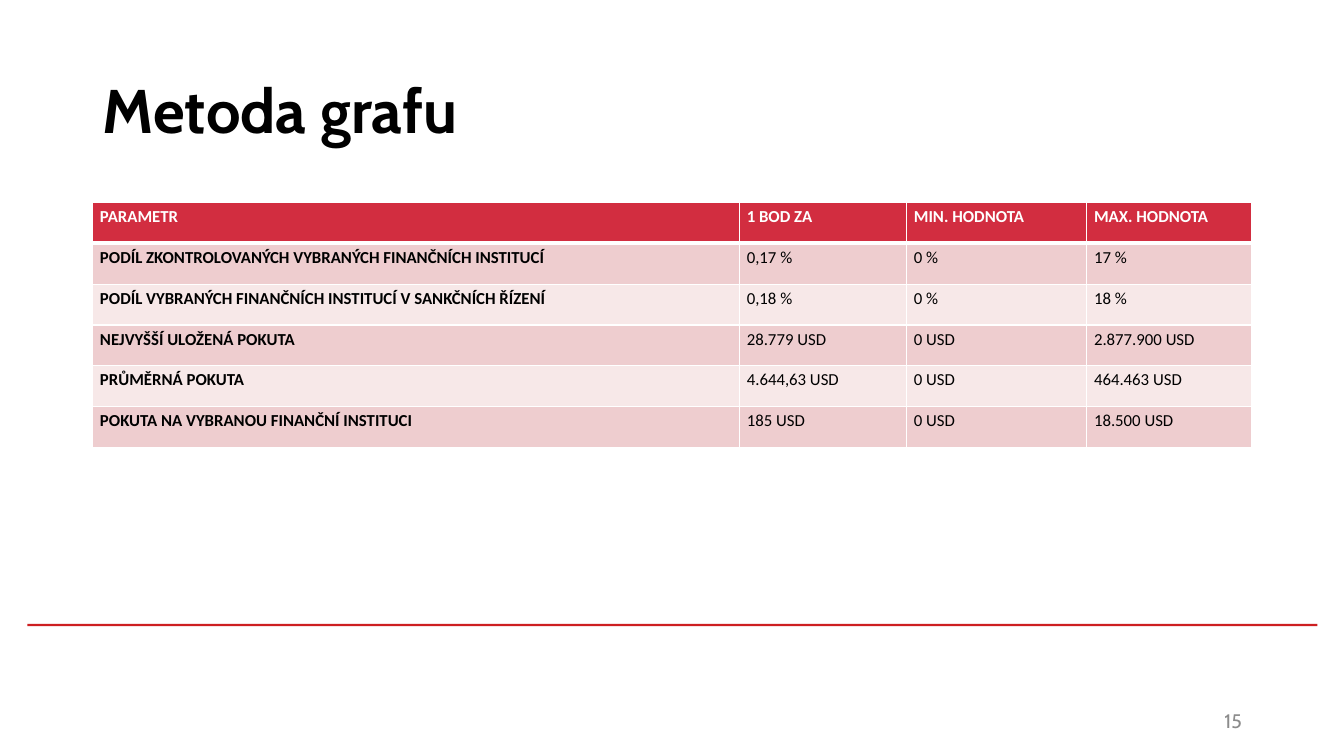
from lxml.etree import SubElement
from pptx import Presentation
from pptx.dml.color import RGBColor
from pptx.enum.shapes import MSO_SHAPE
from pptx.enum.text import MSO_ANCHOR, PP_ALIGN
from pptx.oxml.ns import qn
from pptx.util import Cm, Pt

BLACK = RGBColor(0x00, 0x00, 0x00)
WHITE = RGBColor(0xFF, 0xFF, 0xFF)
GRAY = RGBColor(0x8C, 0x8C, 0x8C)
RULE_RED = RGBColor(0xCD, 0x1F, 0x21)
HEADER_RED = RGBColor(0xD2, 0x2D, 0x40)
DARK_BAND = RGBColor(0xEE, 0xCD, 0xCF)
LIGHT_BAND = RGBColor(0xF7, 0xE8, 0xE8)

ROWS = [
    ("PARAMETR", "1 BOD ZA", "MIN. HODNOTA", "MAX. HODNOTA"),
    ("PODÍL ZKONTROLOVANÝCH VYBRANÝCH FINANČNÍCH INSTITUCÍ", "0,17 %", "0 %", "17 %"),
    ("PODÍL VYBRANÝCH FINANČNÍCH INSTITUCÍ V SANKČNÍCH ŘÍZENÍ", "0,18 %", "0 %", "18 %"),
    ("NEJVYŠŠÍ ULOŽENÁ POKUTA", "28.779 USD", "0 USD", "2.877.900 USD"),
    ("PRŮMĚRNÁ POKUTA", "4.644,63 USD", "0 USD", "464.463 USD"),
    ("POKUTA NA VYBRANOU FINANČNÍ INSTITUCI", "185 USD", "0 USD", "18.500 USD"),
]
COLUMN_WIDTHS = [16.3, 4.21, 4.54, 4.16]
ROW_HEIGHT = 1.03


def write_text(text_frame, text, *, size, font="Cabin", color=BLACK, bold=False,
               align=PP_ALIGN.LEFT, line_spacing=None, space_after=0):
    text_frame.word_wrap = True
    paragraph = text_frame.paragraphs[0]
    paragraph.alignment = align
    paragraph.line_spacing = line_spacing
    paragraph.space_after = Pt(space_after)
    run = paragraph.add_run()
    run.text = text
    run.font.name = font
    run.font.size = Pt(size)
    run.font.bold = bold
    run.font.color.rgb = color


def set_border(cell, side, width):
    properties = cell._tc.get_or_add_tcPr()
    line = SubElement(properties, qn(f"a:{side}"), w=str(Pt(width)))
    fill = SubElement(line, qn("a:solidFill"))
    SubElement(fill, qn("a:srgbClr"), val=str(WHITE))


presentation = Presentation()
presentation.slide_width = Cm(33.87)
presentation.slide_height = Cm(19.05)
slide = presentation.slides.add_slide(presentation.slide_layouts[6])

rule = slide.shapes.add_shape(MSO_SHAPE.RECTANGLE, Cm(0.69), Cm(15.72), Cm(32.51), Cm(0.06))
rule.shadow.inherit = False
rule.fill.solid()
rule.fill.fore_color.rgb = RULE_RED
rule.line.fill.background()

title = slide.shapes.add_textbox(Cm(2.34), Cm(1.02), Cm(29.21), Cm(3.68))
title.text_frame.vertical_anchor = MSO_ANCHOR.MIDDLE
write_text(title.text_frame, "Metoda grafu", size=44, bold=True, line_spacing=0.9)

table = slide.shapes.add_table(
    len(ROWS), len(COLUMN_WIDTHS), Cm(2.34), Cm(5.1),
    Cm(sum(COLUMN_WIDTHS)), Cm(ROW_HEIGHT * len(ROWS))).table
for column, width in zip(table.columns, COLUMN_WIDTHS):
    column.width = Cm(width)

for row_index, values in enumerate(ROWS):
    table.rows[row_index].height = Cm(ROW_HEIGHT)
    is_header = row_index == 0
    band = HEADER_RED if is_header else DARK_BAND if row_index % 2 else LIGHT_BAND
    for column_index, value in enumerate(values):
        cell = table.cell(row_index, column_index)
        cell.margin_left = cell.margin_right = Cm(0.18)
        cell.margin_top = cell.margin_bottom = 0
        for side in ("lnL", "lnR", "lnT", "lnB"):
            thick = (is_header and side == "lnB") or (row_index == 1 and side == "lnT")
            set_border(cell, side, 3 if thick else 1)
        cell.fill.solid()
        cell.fill.fore_color.rgb = band
        write_text(cell.text_frame, value, size=12, font="Calibri",
                   color=WHITE if is_header else BLACK,
                   bold=is_header or column_index == 0,
                   align=PP_ALIGN.JUSTIFY, line_spacing=1.2, space_after=6)

page_number = slide.shapes.add_textbox(Cm(23.93), Cm(17.65), Cm(7.62), Cm(1.02))
page_number.text_frame.vertical_anchor = MSO_ANCHOR.MIDDLE
write_text(page_number.text_frame, "15", size=14, color=GRAY, align=PP_ALIGN.RIGHT)

presentation.save("out.pptx")
